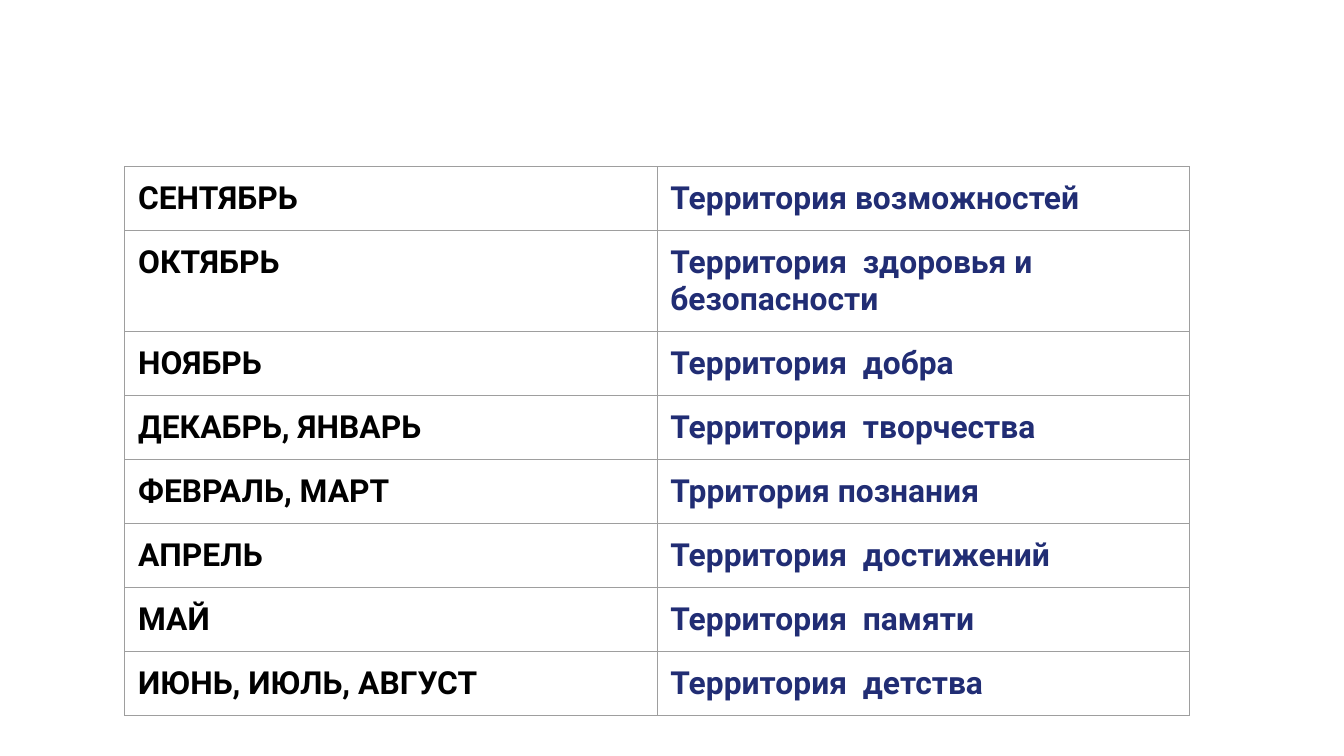
from lxml.etree import SubElement
from pptx import Presentation
from pptx.dml.color import RGBColor
from pptx.oxml.ns import qn
from pptx.util import Cm, Pt

BLACK = RGBColor(0x00, 0x00, 0x00)
NAVY = RGBColor(0x21, 0x2D, 0x74)
GREY = RGBColor(0x9E, 0x9E, 0x9E)

COLUMN_COLORS = (BLACK, NAVY)
COLUMN_WIDTH = Cm(10.06)
FIRST_ROW_HEIGHT = Cm(1.19)
ROW_HEIGHT = Cm(1.07)
MARGIN = Cm(0.25)
BORDER_WIDTH = Pt(0.75)

MONTH_THEMES = [
    ("СЕНТЯБРЬ", "Территория возможностей"),
    ("ОКТЯБРЬ", "Территория  здоровья и безопасности"),
    ("НОЯБРЬ", "Территория  добра"),
    ("ДЕКАБРЬ, ЯНВАРЬ", "Территория  творчества"),
    ("ФЕВРАЛЬ, МАРТ", "Трритория познания"),
    ("АПРЕЛЬ", "Территория  достижений"),
    ("МАЙ", "Территория  памяти"),
    ("ИЮНЬ, ИЮЛЬ, АВГУСТ", "Территория  детства"),
]


def set_borders(cell):
    tc_pr = cell._tc.get_or_add_tcPr()
    for side in ("a:lnL", "a:lnR", "a:lnT", "a:lnB"):
        ln = SubElement(tc_pr, qn(side), w=str(int(BORDER_WIDTH)))
        fill = SubElement(ln, qn("a:solidFill"))
        SubElement(fill, qn("a:srgbClr"), val=str(GREY))


def fill_cell(cell, text, color):
    for side in ("left", "right", "top", "bottom"):
        setattr(cell, f"margin_{side}", MARGIN)
    set_borders(cell)
    cell.fill.background()
    r = cell.text_frame.paragraphs[0].add_run()
    r.text = text
    for name, value in {"name": "Roboto", "size": Pt(17), "bold": True}.items():
        setattr(r.font, name, value)
    r.font.color.rgb = color


def add_month_table(s, left, top):
    n_rows, n_cols = len(MONTH_THEMES), len(COLUMN_COLORS)
    height = FIRST_ROW_HEIGHT + ROW_HEIGHT * (n_rows - 1)
    table = s.shapes.add_table(
        n_rows, n_cols, left, top, COLUMN_WIDTH * n_cols, height
    ).table
    table.first_row = table.horz_banding = False
    for i, (row, texts) in enumerate(zip(table.rows, MONTH_THEMES)):
        row.height = ROW_HEIGHT if i else FIRST_ROW_HEIGHT
        for cell, text, color in zip(row.cells, texts, COLUMN_COLORS):
            fill_cell(cell, text, color)


def main():
    prs = Presentation()
    prs.slide_width, prs.slide_height = Cm(25.4), Cm(14.29)
    s = prs.slides.add_slide(prs.slide_layouts[6])
    add_month_table(s, Cm(2.36), Cm(3.15))
    prs.save("out.pptx")


if __name__ == "__main__":
    main()
